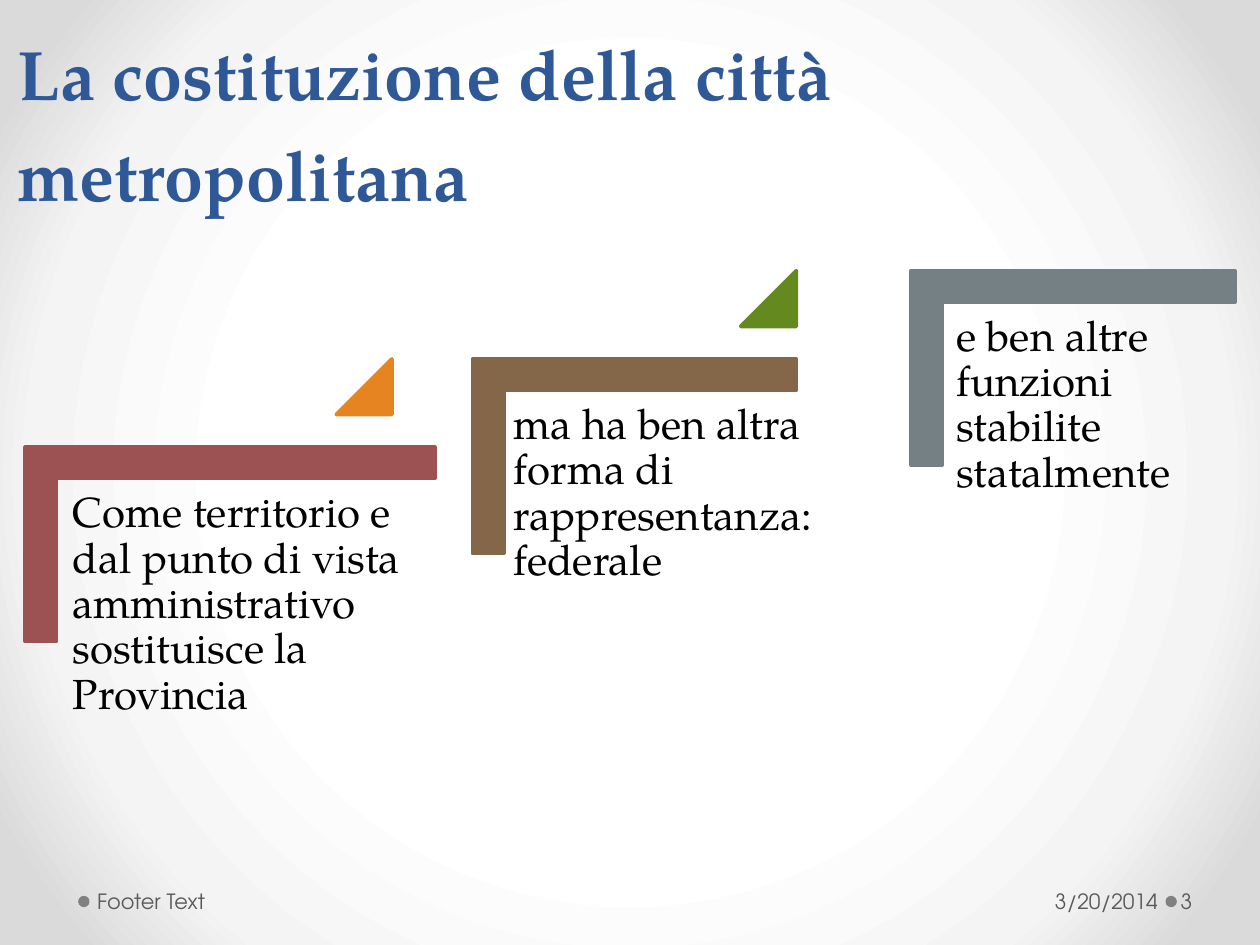
import pptx
import pptx.dml.color
import pptx.enum.shapes
import pptx.enum.text
import pptx.oxml
import pptx.oxml.ns
import pptx.util

Inches = pptx.util.Inches
Pt = pptx.util.Pt
SHAPE = pptx.enum.shapes.MSO_SHAPE
ANCHOR = pptx.enum.text.MSO_ANCHOR
ALIGN = pptx.enum.text.PP_ALIGN

# Content: steps from left to right, each higher than the one before
TITLE = "La costituzione della città metropolitana"
STEPS = [
    {"text": "Come territorio e dal punto di vista amministrativo sostituisce la Provincia",
     "left": 0.2, "width": 3.25, "text_left": 0.48, "text_width": 2.94,
     "color": "9C5252", "triangle": (2.67, "E68422")},
    {"text": "ma ha ben altra forma di rappresentanza: federale",
     "left": 3.75, "width": 2.57, "text_left": 3.98, "text_width": 2.9,
     "color": "846648", "triangle": (5.88, "63891F")},
    {"text": "e ben altre funzioni stabilite statalmente",
     "left": 7.23, "width": 2.57, "text_left": 7.49, "text_width": 2.32,
     "color": "758085", "triangle": None},
]
# Footer: text, left, width, left and right inset, alignment
FOOTER = [
    ("3/20/2014", 6.96, 2.28, 0.1, 0.05, ALIGN.RIGHT),
    ("Footer Text", 0.72, 3.11, 0.05, 0.1, ALIGN.LEFT),
    ("3", 9.34, 0.61, 0.03, 0.05, ALIGN.LEFT),
]
FOOTER_DOTS = [9.25, 0.62]

THEME = {
    "title": {"name": "TeX Gyre Pagella", "size": Pt(40), "bold": True, "color": "2F5897"},
    "body": {"name": "TeX Gyre Pagella", "size": Pt(24), "color": "000000"},
    "footer": {"name": "TeX Gyre Adventor", "size": Pt(12), "color": "595959"},
    "dot": "808080",
    "background": [(50, "FFFFFF"), (76, "F4F4F4"), (92, "DADADA")],
}

# Staircase rules, in inches
FIRST_TOP, RISE = 3.55, 0.7
BRACKET_HEIGHT, TEXT_DROP, TEXT_HEIGHT = 1.54, 0.25, 2.03
TRIANGLE_SIZE, DOT_SIZE = 0.44, 0.09


def add_text(slide, text, box, style, insets, anchor=ANCHOR.TOP, **paragraph_format):
    frame = slide.shapes.add_textbox(*map(Inches, box)).text_frame
    frame.word_wrap = True
    frame.vertical_anchor = anchor
    for side, inset in zip(("left", "top", "right", "bottom"), insets):
        setattr(frame, f"margin_{side}", Inches(inset))
    paragraph = frame.paragraphs[0]
    for name, value in paragraph_format.items():
        setattr(paragraph, name, value)
    run = paragraph.add_run()
    run.text = text
    for name, value in THEME[style].items():
        if name == "color":
            run.font.color.rgb = pptx.dml.color.RGBColor.from_string(value)
        else:
            setattr(run.font, name, value)


def add_solid(slide, kind, box, color, line_width=0, adjustments=(), rotation=0):
    shape = slide.shapes.add_shape(kind, *map(Inches, box))
    shape.shadow.inherit = False
    shape.rotation = rotation
    for index, value in enumerate(adjustments):
        shape.adjustments[index] = value
    rgb = pptx.dml.color.RGBColor.from_string(color)
    shape.fill.solid()
    shape.fill.fore_color.rgb = rgb
    if line_width:
        shape.line.color.rgb = rgb
        shape.line.width = Pt(line_width)
    else:
        shape.line.fill.background()


def add_bracket(slide, left, top, width, color):
    # A quarter turn swaps the sides around the same centre
    shift = (width - BRACKET_HEIGHT) / 2
    box = (left + shift, top - shift, BRACKET_HEIGHT, width)
    add_solid(slide, SHAPE.CORNER, box, color, 2.25, (0.161, 0.161), 90)


def set_radial_background(slide):
    slide.background.fill.gradient()
    gradient = next(slide.element.iter(pptx.oxml.ns.qn("a:gradFill")))
    stops = "".join(f'<a:gs pos="{position * 1000}"><a:srgbClr val="{color}"/></a:gs>'
                    for position, color in THEME["background"])
    radial = pptx.oxml.parse_xml(
        f'<a:gradFill {pptx.oxml.ns.nsdecls("a")} rotWithShape="1"><a:gsLst>{stops}</a:gsLst>'
        '<a:path path="circle"><a:fillToRect l="50000" t="50000" r="50000" b="50000"/>'
        '</a:path></a:gradFill>')
    gradient.getparent().replace(gradient, radial)


def main():
    presentation = pptx.Presentation()
    presentation.slide_width, presentation.slide_height = Inches(10), Inches(7.5)
    slide = presentation.slides.add_slide(presentation.slide_layouts[6])
    set_radial_background(slide)

    # Footer dots and title
    for left in FOOTER_DOTS:
        add_solid(slide, SHAPE.OVAL, (left, 7.11, DOT_SIZE, DOT_SIZE), THEME["dot"])
    add_text(slide, TITLE, (0.04, 0.84, 9.53, 0.92), "title", (0.1, 0.05, 0.1, 0.05),
             ANCHOR.BOTTOM, line_spacing=Pt(58))

    # Rising steps, each triangle level with the next bracket
    for index, step in enumerate(STEPS):
        top = FIRST_TOP - index * RISE
        add_bracket(slide, step["left"], top, step["width"], step["color"])
        text_box = (step["text_left"], top + TEXT_DROP, step["text_width"], TEXT_HEIGHT)
        add_text(slide, step["text"], text_box, "body", (0.1,) * 4, line_spacing=0.9)
        if step["triangle"]:
            left, color = step["triangle"]
            add_solid(slide, SHAPE.ISOSCELES_TRIANGLE,
                      (left, top - RISE, TRIANGLE_SIZE, TRIANGLE_SIZE), color, 2.25, (1,))

    # Footer texts
    for text, left, width, inset_left, inset_right, alignment in FOOTER:
        add_text(slide, text, (left, 6.95, width, 0.4), "footer",
                 (inset_left, 0.05, inset_right, 0.05), ANCHOR.MIDDLE, alignment=alignment)

    presentation.save("out.pptx")


if __name__ == "__main__":
    main()
